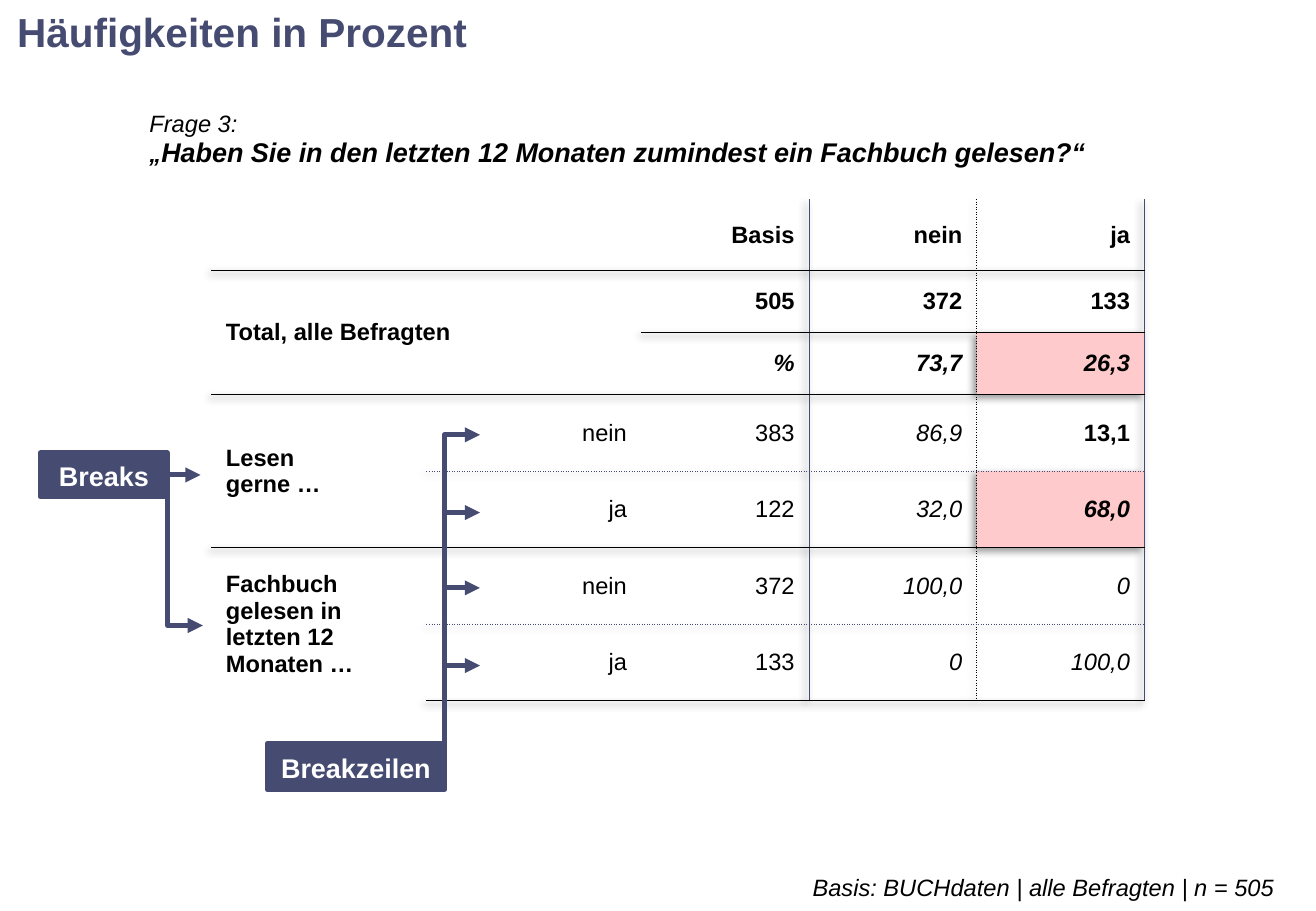
from pptx import Presentation, util as u
from pptx.dml.color import RGBColor
from pptx.enum import dml, shapes, text
from pptx.oxml import parse_xml
from pptx.oxml.ns import nsdecls, qn
from lxml import etree

THEME = dict(font="Arial", navy="464B71", black="000000", white="FFFFFF",
             pink="FECACB", title=24, big=16, body=14)
TITLE = "Häufigkeiten in Prozent"
FOOT = "Basis: BUCHdaten | alle Befragten | n = 505"
ASK = [("Frage 3:\n", "i", "body"), ("„", "bi", "body"),
       ("Haben Sie in den letzten 12 Monaten zumindest ein Fachbuch gelesen?“",
        "bi", "big")]

COLS = [0.63, 1.77, 1.77, 1.38, 1.38, 1.38]
ROWS = [0.98, 0.59, 0.51, 0.51] + [0.63] * 4
# Each value is (text, style); b is bold, i is italic.
# Values fill a table row from the right.
DATA = {
    1: [("Basis", "b"), ("nein", "b"), ("ja", "b")],
    2: [("505", "b"), ("372", "b"), ("133", "b")],
    3: [("%", "bi"), ("73,7", "bi"), ("26,3", "bi")],
    4: [("nein", ""), ("383", ""), ("86,9", "i"), ("13,1", "b")],
    5: [("ja", ""), ("122", ""), ("32,0", "i"), ("68,0", "bi")],
    6: [("nein", ""), ("372", ""), ("100,0", "i"), ("0", "i")],
    7: [("ja", ""), ("133", ""), ("0", "i"), ("100,0", "i")],
}
HEADS = {2: "Total, alle Befragten", 4: "Lesen\ngerne …",
         6: "Fachbuch\ngelesen in\nletzten 12\nMonaten …"}
MERGE = [(0, 0, 0, 5), (2, 0, 3, 0), (2, 1, 3, 2), (4, 0, 5, 0),
         (4, 1, 5, 1), (6, 1, 7, 1)]
PINK = {(3, 5), (5, 5)}

THIN = ("black", 0.5, "solid")
DOT = ("black", 0.5, "sysDot")
EDGE = ("navy", 0.75, "solid")
SPLIT = ("navy", 0.75, "sysDot")
UPRIGHT = {3: EDGE, 4: DOT, 5: EDGE}

TAGS = [("Breaks", 0.33, 3.73, 1.05, 0.36),
        ("Breakzeilen", 2.2, 6.12, 1.46, 0.38)]
# Elbow arrows: x and y of the start, y and x of the tip
ELBOWS = [(1.38, 3.88, 5.15, 1.67)] + [
    (3.66, 6.31, y, 3.95) for y in (3.58, 4.22, 4.84, 5.48)]


def tint(name):
    return RGBColor.from_string(THEME[name])


def add_run(para, words, style="", size="body", color="black"):
    for n, part in enumerate(words.split("\n")):
        if n:
            para.add_line_break()
        if part:
            run = para.add_run()
            run.text = part
            font = run.font
            font.name, font.size = THEME["font"], u.Pt(THEME[size])
            font.bold, font.italic = "b" in style, "i" in style
            font.color.rgb = tint(color)


def set_box(frame, pads, wrap=True):
    frame.word_wrap = wrap
    frame.auto_size = text.MSO_AUTO_SIZE.NONE
    frame.vertical_anchor = text.MSO_ANCHOR.MIDDLE
    (frame.margin_left, frame.margin_top,
     frame.margin_right, frame.margin_bottom) = map(u.Inches, pads)


def flat_line(r, c):
    """Return the line below a cell, if it has one."""
    if r % 2 and c >= 1:
        return THIN
    if r in (4, 6) and c >= 2:
        return SPLIT
    return None


def set_edges(cell, r, c):
    edges = {"lnL": UPRIGHT.get(c - 1) if r else None,
             "lnR": UPRIGHT.get(c) if r else None,
             "lnT": flat_line(r - 1, c) if r > 1 else None,
             "lnB": flat_line(r, c)}
    props = cell._tc.get_or_add_tcPr()
    for tag, edge in edges.items():
        if edge:
            color, width, dash = edge
            props.append(parse_xml(
                f'<a:{tag} {nsdecls("a")} w="{u.Pt(width)}"><a:solidFill>'
                f'<a:srgbClr val="{THEME[color]}"/></a:solidFill>'
                f'<a:prstDash val="{dash}"/></a:{tag}>'))


def add_grid(slide):
    frame = slide.shapes.add_table(
        len(ROWS), len(COLS), u.Inches(1.11), u.Inches(0.66),
        u.Inches(sum(COLS)), u.Inches(sum(ROWS)))
    grid = frame.table
    grid.first_row = grid.horz_banding = False
    props = grid._tbl.tblPr
    props.find(qn("a:tableStyleId")).text = (
        "{2D5ABB26-0587-4C30-8999-92F81FD0307C}")
    props.insert(0, parse_xml(
        f'<a:effectLst {nsdecls("a")}><a:outerShdw blurRad="50800" '
        'dist="38100" dir="8100000" algn="tr" rotWithShape="0">'
        '<a:prstClr val="black"><a:alpha val="40000"/></a:prstClr>'
        '</a:outerShdw></a:effectLst>'))
    for col, width in zip(grid.columns, COLS):
        col.width = u.Inches(width)
    for row, height in zip(grid.rows, ROWS):
        row.height = u.Inches(height)
    for r in range(len(ROWS)):
        for c in range(len(COLS)):
            cell = grid.cell(r, c)
            set_edges(cell, r, c)
            if (r, c) in PINK:
                cell.fill.solid()
                cell.fill.fore_color.rgb = tint("pink")
            else:
                cell.fill.background()
            cell.vertical_anchor = text.MSO_ANCHOR.MIDDLE
            cell.margin_left = cell.margin_right = u.Inches(0.12)
            cell.margin_top = cell.margin_bottom = u.Inches(0.05)
    for top, left, low, right in MERGE:
        grid.cell(top, left).merge(grid.cell(low, right))
    for words, style, size in ASK:
        add_run(grid.cell(0, 0).text_frame.paragraphs[0], words, style, size)
    for r, words in HEADS.items():
        add_run(grid.cell(r, 1).text_frame.paragraphs[0], words, "b")
    for r, vals in DATA.items():
        for c, (words, style) in enumerate(vals, len(COLS) - len(vals)):
            para = grid.cell(r, c).text_frame.paragraphs[0]
            para.alignment = text.PP_ALIGN.RIGHT
            add_run(para, words, style)


def add_box(slide, words, place, color, pad, align, font):
    box = slide.shapes.add_shape(
        shapes.MSO_SHAPE.RECTANGLE, *map(u.Inches, place))
    box.shadow.inherit = False
    box.fill.solid()
    box.fill.fore_color.rgb = tint(color)
    box.line.fill.background()
    set_box(box.text_frame, pad)
    para = box.text_frame.paragraphs[0]
    para.alignment, para.line_spacing = align, 1.05
    add_run(para, words, *font)
    return box


def set_arrow(line):
    line.color.rgb = tint("navy")
    line.width = u.Pt(3)
    line.dash_style = dml.MSO_LINE.SOLID
    etree.SubElement(line._get_or_add_ln(), qn("a:tailEnd"), type="triangle")


def add_elbow(slide, x, start, y, tip):
    pen = slide.shapes.build_freeform(u.Inches(x), u.Inches(start))
    pen.add_line_segments([(u.Inches(x), u.Inches(y)),
                           (u.Inches(tip), u.Inches(y))], close=False)
    elbow = pen.convert_to_shape()
    elbow.shadow.inherit = False
    elbow.fill.background()
    set_arrow(elbow.line)


def main():
    deck = Presentation()
    deck.slide_width, deck.slide_height = u.Inches(10.83), u.Inches(7.5)
    slide = deck.slides.add_slide(deck.slide_layouts[5])
    add_grid(slide)

    title = slide.shapes.title
    title.left = title.top = 0
    title.width, title.height = u.Inches(3.98), u.Inches(0.51)
    set_box(title.text_frame, (0.14, 0.05, 0.1, 0.05), wrap=False)
    para = title.text_frame.paragraphs[0]
    para.alignment = text.PP_ALIGN.LEFT
    add_run(para, TITLE, "b", "title", "navy")

    for elbow in ELBOWS:
        add_elbow(slide, *elbow)
    arrow = slide.shapes.add_connector(
        shapes.MSO_CONNECTOR.STRAIGHT, *map(u.Inches, (1.38, 3.91, 1.65, 3.91)))
    set_arrow(arrow.line)
    etree.SubElement(arrow._element.spPr, qn("a:effectLst"))

    for words, *place in TAGS:
        tag = add_box(slide, words, place, "navy", (0.1, 0.05, 0.1, 0.05),
                      text.PP_ALIGN.CENTER, ("b", "big", "white"))
        tag.line.color.rgb = tint("navy")
        tag.line.width = u.Pt(3)
    add_box(slide, FOOT, (4.39, 7.12, 6.16, 0.36), "white", [0.06] * 4,
            text.PP_ALIGN.RIGHT, ("i", "body", "black"))
    deck.save("out.pptx")


if __name__ == "__main__":
    main()
